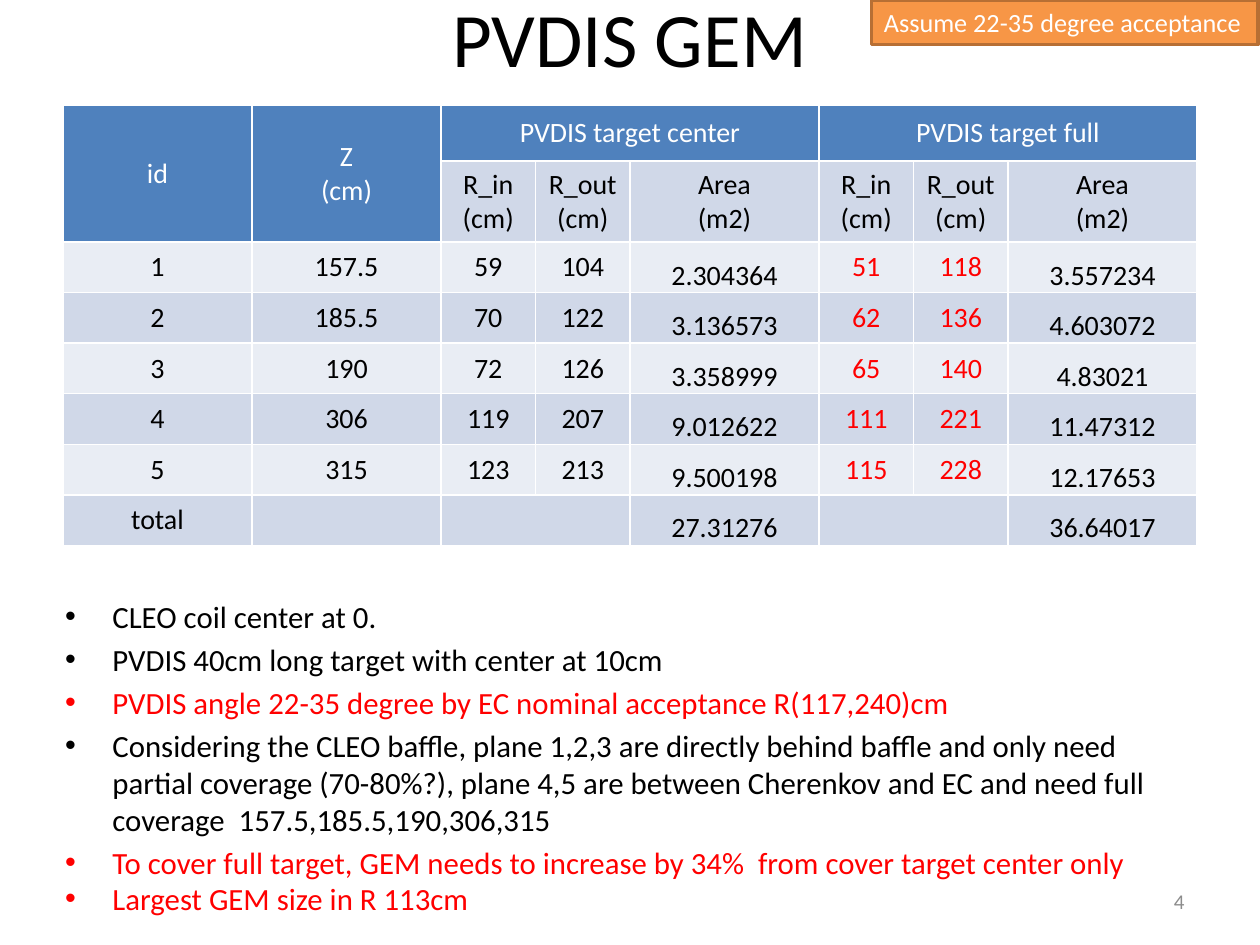
from pptx import Presentation
from pptx.dml.color import RGBColor
from pptx.enum.shapes import MSO_SHAPE
from pptx.enum.text import MSO_ANCHOR as ANCHOR, MSO_AUTO_SIZE as AUTO, PP_ALIGN as ALIGN
from pptx.util import Pt

BLACK, WHITE, RED = "000000", "FFFFFF", "FF0000"
HEADER, DARK_BAND, LIGHT_BAND = "4F81BD", "D0D8E8", "E9EDF4"

COLUMN_WIDTHS = [108, 108, 54, 54, 108, 54, 54, 108]
ROW_HEIGHTS = [32, 46] + [28.9] * 6
AREA_COLUMNS = (4, 7)
FULL_RADIUS_COLUMNS = (5, 6)
MERGES = [(0, 0, 1, 0), (0, 1, 1, 1), (0, 2, 0, 4), (0, 5, 0, 7),
          (7, 2, 7, 3), (7, 5, 7, 6)]
SUBHEADS = ["R_in (cm)", "R_out(cm)", "Area\n(m2)"]
ROWS = [
    ["id", "Z\n(cm)", "PVDIS target center", "", "", "PVDIS target full", "", ""],
    ["", ""] + SUBHEADS * 2,
    ["1", "157.5", "59", "104", "2.304364", "51", "118", "3.557234"],
    ["2", "185.5", "70", "122", "3.136573", "62", "136", "4.603072"],
    ["3", "190", "72", "126", "3.358999", "65", "140", "4.83021"],
    ["4", "306", "119", "207", "9.012622", "111", "221", "11.47312"],
    ["5", "315", "123", "213", "9.500198", "115", "228", "12.17653"],
    ["total", "", "", "", "27.31276", "", "", "36.64017"],
]
NOTES = [
    ("CLEO coil center at 0.", BLACK, 0.8),
    ("PVDIS 40cm long target with center at 10cm", BLACK, 1.0),
    ("PVDIS angle 22-35 degree by EC nominal acceptance R(117,240)cm", RED, 1.0),
    ("Considering the CLEO baffle, plane 1,2,3 are directly behind baffle and only "
     "need partial coverage (70-80%?), plane 4,5 are between Cherenkov and EC and "
     "need full coverage  157.5,185.5,190,306,315", BLACK, 1.0),
    ("To cover full target, GEM needs to increase by 34%  from cover target center only",
     RED, 1.0),
    ("Largest GEM size in R 113cm", RED, 0.8),
]


def rgb(value):
    return RGBColor.from_string(value)


def place(sp, left, top, width, height):
    sp.left, sp.top, sp.width, sp.height = Pt(left), Pt(top), Pt(width), Pt(height)


def style(p, size, color, align):
    p.alignment = align
    p.font.name = "Calibri"
    p.font.size = Pt(size)
    p.font.bold = False
    p.font.color.rgb = rgb(color)


def add_title(slide, box):
    sp = slide.shapes.title
    place(sp, *box)
    tf = sp.text_frame
    tf.text = "PVDIS GEM"
    tf.auto_size = AUTO.NONE
    tf.vertical_anchor = ANCHOR.MIDDLE
    style(tf.paragraphs[0], 44, BLACK, ALIGN.CENTER)


def fill_cell(cell, text, row, col):
    header = row == 0 or (row == 1 and col < 2)
    data = row > 1
    if header:
        fill, color = HEADER, WHITE
    else:
        fill = LIGHT_BAND if row % 2 == 0 else DARK_BAND
        color = RED if data and col in FULL_RADIUS_COLUMNS else BLACK
    if row == len(ROWS) - 1:
        fill = DARK_BAND
    cell.fill.solid()
    cell.fill.fore_color.rgb = rgb(fill)
    cell.vertical_anchor = ANCHOR.MIDDLE
    if data and col in AREA_COLUMNS:
        cell.vertical_anchor = ANCHOR.BOTTOM
        cell.margin_left = cell.margin_right = cell.margin_top = Pt(0.75)
        cell.margin_bottom = Pt(0)
    cell.text = text
    for p in cell.text_frame.paragraphs:
        style(p, 16, color, ALIGN.CENTER)


def add_gem_table(slide, box):
    table = slide.shapes.add_table(len(ROWS), len(COLUMN_WIDTHS), *map(Pt, box)).table
    for column, width in zip(table.columns, COLUMN_WIDTHS):
        column.width = Pt(width)
    for row, height in zip(table.rows, ROW_HEIGHTS):
        row.height = Pt(height)
    for i, texts in enumerate(ROWS):
        for j, text in enumerate(texts):
            fill_cell(table.cell(i, j), text, i, j)
    for top, left, bottom, right in MERGES:
        table.cell(top, left).merge(table.cell(bottom, right))


def add_notes_list(slide, box):
    sp = slide.placeholders[1]
    place(sp, *box)
    tf = sp.text_frame
    tf.text = "\n".join(text for text, _, _ in NOTES)
    tf.auto_size = AUTO.NONE
    for p, (_, color, spacing) in zip(tf.paragraphs, NOTES):
        style(p, 17.6, color, ALIGN.LEFT)
        p.line_spacing = spacing
        p.space_before = Pt(3.5)


def add_page_number(slide, box):
    tf = slide.shapes.add_textbox(*map(Pt, box)).text_frame
    tf.word_wrap = True
    tf.vertical_anchor = ANCHOR.MIDDLE
    tf.text = "4"
    style(tf.paragraphs[0], 12, "8C8C8C", ALIGN.RIGHT)


def add_callout(slide, box):
    sp = slide.shapes.add_shape(MSO_SHAPE.RECTANGLE, *map(Pt, box))
    sp.shadow.inherit = False
    sp.fill.solid()
    sp.fill.fore_color.rgb = rgb("F79646")
    sp.line.color.rgb = rgb("B76F34")
    sp.line.width = Pt(2)
    tf = sp.text_frame
    tf.word_wrap = False
    tf.auto_size = AUTO.SHAPE_TO_FIT_TEXT
    tf.vertical_anchor = ANCHOR.TOP
    tf.text = "Assume 22-35 degree acceptance"
    style(tf.paragraphs[0], 15, WHITE, ALIGN.LEFT)


def main():
    prs = Presentation()
    prs.slide_width, prs.slide_height = Pt(720), Pt(540)
    slide = prs.slides.add_slide(prs.slide_layouts[1])
    add_title(slide, (36, -24, 648, 90))
    add_gem_table(slide, (36, 60, 648, 251.4))
    add_notes_list(slide, (30, 342, 648, 174))
    add_page_number(slide, (516, 500.5, 168, 28.8))
    add_callout(slide, (498, 0, 221, 25.5))
    prs.save("out.pptx")


if __name__ == "__main__":
    main()
